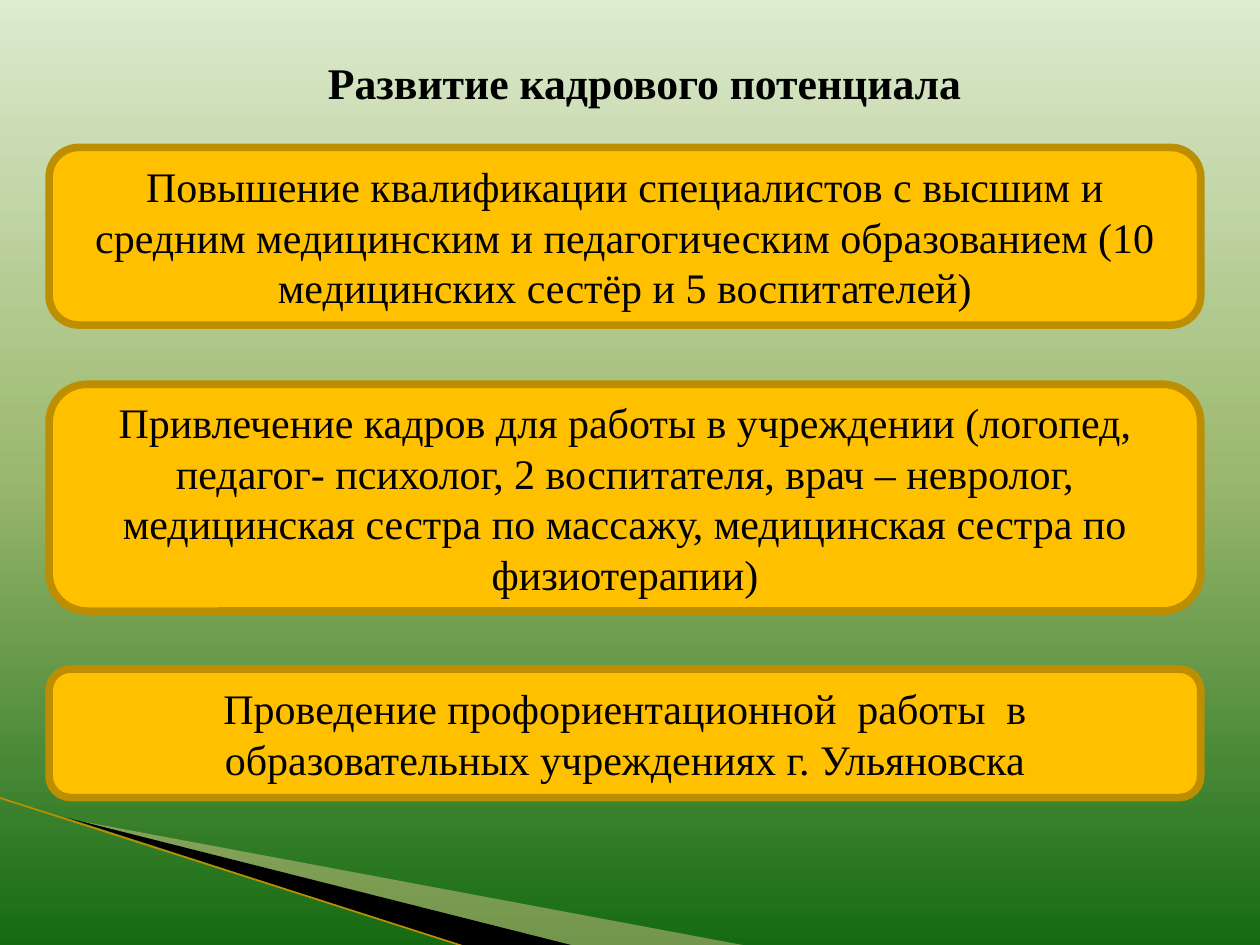
from copy import deepcopy

from lxml import etree
from pptx import Presentation
from pptx.dml.color import RGBColor
from pptx.enum.shapes import MSO_CONNECTOR, MSO_SHAPE
from pptx.enum.text import MSO_ANCHOR, MSO_AUTO_SIZE, PP_ALIGN
from pptx.oxml.ns import qn
from pptx.util import Inches, Pt

STRAIGHT = MSO_CONNECTOR.STRAIGHT
ROUNDED = MSO_SHAPE.ROUNDED_RECTANGLE
MIDDLE = MSO_ANCHOR.MIDDLE
CENTER = PP_ALIGN.CENTER
FIXED_SIZE = MSO_AUTO_SIZE.NONE

COLORS = {
    "sky": "DDEBCF",
    "meadow": "9CB86E",
    "forest": "156B13",
    "sand": "FFD9A2",
    "black": "000000",
    "gold": "FFC000",
    "dark_gold": "BD8E00",
}


def rgb(name):
    return RGBColor.from_string(COLORS[name])


def write_centered(shape, text, font_format):
    frame = shape.text_frame
    for key, value in {
        "word_wrap": True,
        "auto_size": FIXED_SIZE,
        "vertical_anchor": MIDDLE,
        "text": text,
    }.items():
        setattr(frame, key, value)
    paragraph = frame.paragraphs[0]
    paragraph.alignment = CENTER
    font = paragraph.runs[0].font
    font.color.rgb = rgb("black")
    for key, value in font_format.items():
        setattr(font, key, value)


prs = Presentation()
prs.slide_width = Inches(10)
prs.slide_height = Inches(7.5)
slide = prs.slides.add_slide(prs.slide_layouts[5])

backdrop = slide.background.fill
backdrop.gradient()
backdrop.gradient_angle = 270
stop_list = backdrop._fill._gradFill.find(qn("a:gsLst"))
stop_list.append(deepcopy(stop_list[-1]))
for stop, position, color in zip(
    backdrop.gradient_stops, (0, 0.5, 1), ("sky", "meadow", "forest")
):
    stop.position = position
    stop.color.rgb = rgb(color)

wedges = [
    ("sand", 40, [(0.55, 6.5), (5.95, 7.51), (4.56, 7.51)]),
    ("black", 100, [(0.53, 6.49), (4.57, 7.51), (3.72, 7.52)]),
]
for color, opacity, corners in wedges:
    points = [(Inches(x), Inches(y)) for x, y in corners]
    builder = slide.shapes.build_freeform(*points[0])
    builder.add_line_segments(points[1:], close=True)
    wedge = builder.convert_to_shape()
    wedge.shadow.inherit = False
    wedge.fill.solid()
    wedge.fill.fore_color.rgb = rgb(color)
    wedge.line.fill.background()
    if opacity < 100:
        fill_color = wedge.fill._xPr.find(qn("a:solidFill"))[0]
        etree.SubElement(fill_color, qn("a:alpha"), val=str(opacity * 1000))

edge = slide.shapes.add_connector(
    STRAIGHT, Inches(-0.01), Inches(6.33), Inches(3.71), Inches(7.52)
)
edge.line.color.rgb = rgb("dark_gold")
edge.line.width = Pt(0.95)
etree.SubElement(edge._element.spPr, qn("a:effectLst"))

title = slide.shapes.title
for key, value in {"left": 2.42, "top": 0.39, "width": 5.39, "height": 0.52}.items():
    setattr(title, key, Inches(value))
write_centered(
    title,
    "Развитие кадрового потенциала",
    {"name": "Times New Roman", "size": Pt(25), "bold": True},
)

measures = [
    (1.17, 1.41, "Повышение квалификации специалистов с высшим и средним медицинским "
     "и педагогическим образованием (10 медицинских сестёр и 5 воспитателей)"),
    (3.05, 1.8, "Привлечение кадров для работы в учреждении (логопед, педагог- психолог, "
     "2 воспитателя, врач – невролог, медицинская сестра по массажу, "
     "медицинская сестра по физиотерапии)"),
    (5.31, 1.02, "Проведение профориентационной  работы  в образовательных учреждениях "
     "г. Ульяновска"),
]
for top, height, text in measures:
    measure = slide.shapes.add_shape(
        ROUNDED, Inches(0.39), Inches(top), Inches(9.14), Inches(height)
    )
    measure.shadow.inherit = False
    measure.fill.solid()
    measure.fill.fore_color.rgb = rgb("gold")
    measure.line.color.rgb = rgb("dark_gold")
    measure.line.width = Pt(4.33)
    write_centered(measure, text, {"name": "Times New Roman", "size": Pt(24)})

prs.save("out.pptx")
